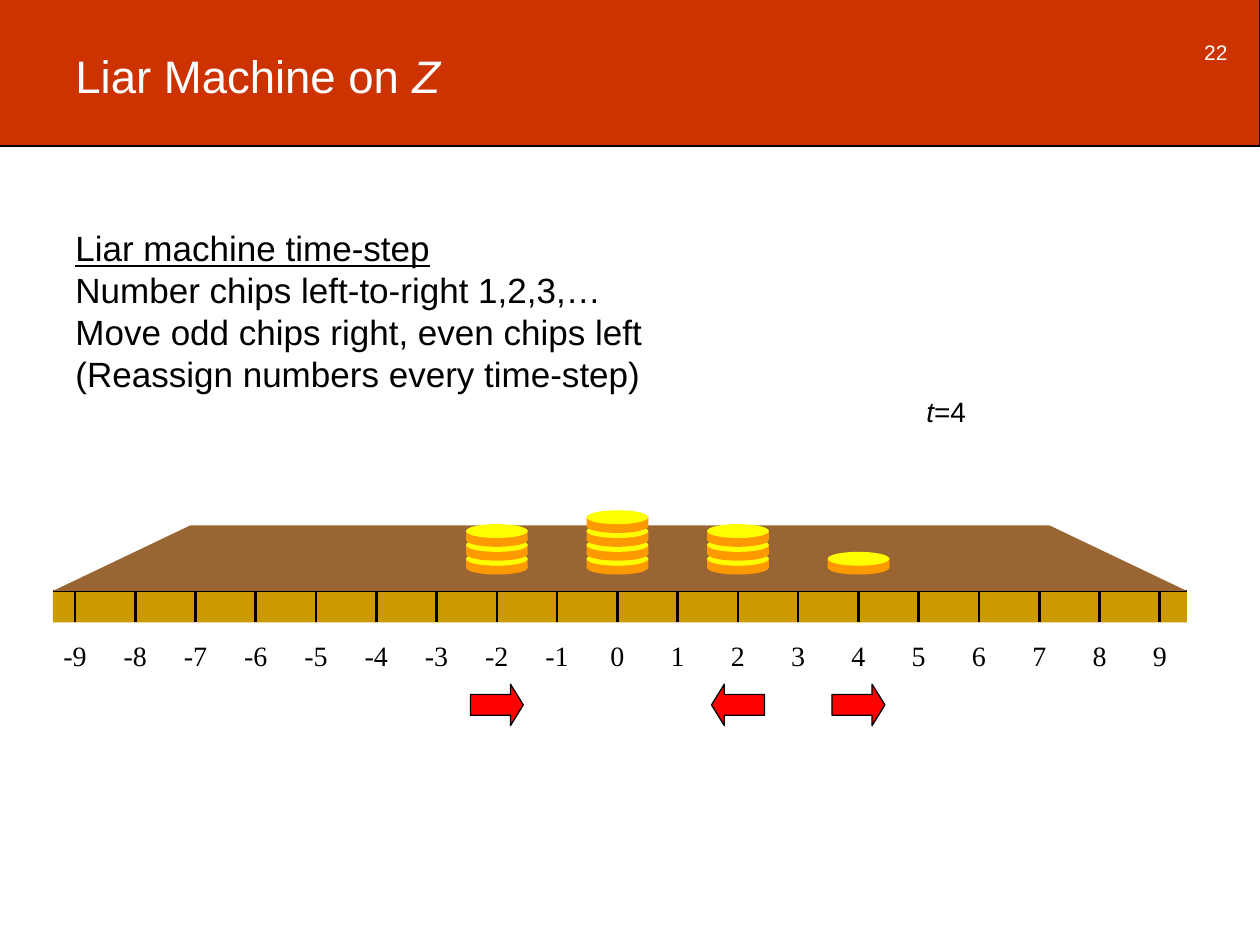
from lxml import etree
from pptx import Presentation
from pptx import util as u
from pptx.dml.color import RGBColor
from pptx.enum import shapes, text
from pptx.oxml import ns

WHITE = RGBColor(0xFF, 0xFF, 0xFF)
BLACK = RGBColor(0x00, 0x00, 0x00)
BANNER = RGBColor(0xCC, 0x33, 0x00)
TABLE_TOP = RGBColor(0x99, 0x66, 0x33)
TABLE_EDGE = RGBColor(0xCC, 0x99, 0x00)
CHIP_SIDE = RGBColor(0xFF, 0x99, 0x00)
CHIP_FACE = RGBColor(0xFF, 0xFF, 0x00)
ARROW_RED = RGBColor(0xFF, 0x00, 0x00)

SANS, SERIF = "Arial", "Times New Roman"
KIND = shapes.MSO_SHAPE
LEFT, CENTER, RIGHT = (text.PP_ALIGN.LEFT, text.PP_ALIGN.CENTER,
                       text.PP_ALIGN.RIGHT)

# Number line: one column per integer position
LAST = 9
COLUMN = 8.61 / (2 * LAST)
ORIGIN = 4.9
EDGE_LEFT, EDGE_RIGHT = 0.42, 9.42
EDGE_TOP, EDGE_BOTTOM = 4.69, 4.94
BACK_TOP, BACK_INSET = 4.17, 1.09

CHIP_WIDTH, CHIP_STEP, CHIP_BASE = 0.49, 0.11, 4.38
STACKS = {-2: 3, 0: 4, 2: 3, 4: 1}
MOVES = {-2: KIND.RIGHT_ARROW, 2: KIND.LEFT_ARROW, 4: KIND.RIGHT_ARROW}


def column_x(n):
    """Centre of position n on the number line."""
    return ORIGIN + n * COLUMN


def inches(*lengths):
    return [u.Inches(length) for length in lengths]


def paint(s, fill, line=None):
    s.shadow.inherit = False
    s.fill.solid()
    s.fill.fore_color.rgb = fill
    if line is None:
        s.line.fill.background()
    else:
        s.line.color.rgb = line
        s.line.width = u.Pt(0.75)


def add_shape(parent, kind, box, fill, line=None):
    s = parent.add_shape(kind, *inches(*box))
    paint(s, fill, line)
    return s


def add_line(parent, start, end):
    c = parent.add_connector(shapes.MSO_CONNECTOR.STRAIGHT,
                             *inches(*start, *end))
    c.line.color.rgb = BLACK
    c.line.width = u.Pt(1.5)
    etree.SubElement(c._element.spPr, ns.qn("a:effectLst"))


def add_text(parent, box, lines, size, font=SANS, color=BLACK, align=LEFT,
             wrap=False, anchor=text.MSO_ANCHOR.TOP):
    """Each line is a list of (words, style) runs; style is '', 'i' or 'u'."""
    tf = parent.add_textbox(*inches(*box)).text_frame
    tf.word_wrap = wrap
    tf.vertical_anchor = anchor
    for i, runs in enumerate(lines):
        p = tf.paragraphs[0] if i == 0 else tf.add_paragraph()
        p.alignment = align
        for words, style in runs:
            r = p.add_run()
            r.text = words
            r.font.name = font
            r.font.size = u.Pt(size)
            r.font.color.rgb = color
            r.font.italic = style == "i"
            r.font.underline = style == "u"


def add_header(sp):
    add_shape(sp, KIND.RECTANGLE, (-0.01, -0.01, 10.01, 1.17), BANNER, BLACK)
    add_text(sp, (0.5, 0.33, 7.58, 1), [[("Liar Machine on ", ""), ("Z", "i")]],
             26, color=WHITE, wrap=True)
    add_text(sp, (9.42, 0.15, 0.42, 0.52), [[("22", "")]], 12, color=WHITE,
             align=RIGHT, wrap=True, anchor=text.MSO_ANCHOR.MIDDLE)


def add_number_line(sp):
    add_shape(sp, KIND.RECTANGLE,
              (EDGE_LEFT, EDGE_TOP, EDGE_RIGHT - EDGE_LEFT,
               EDGE_BOTTOM - EDGE_TOP), TABLE_EDGE)
    group = sp.add_group_shape().shapes
    add_line(group, (EDGE_LEFT, EDGE_TOP), (EDGE_RIGHT, EDGE_TOP))
    for n in range(-LAST, LAST + 1):
        x = column_x(n)
        width = 0.41 if n < 0 else 0.33
        add_line(group, (x, EDGE_TOP), (x, EDGE_BOTTOM))
        add_text(group, (x - width / 2, 5.02, width, 0.4), [[(str(n), "")]],
                 16, font=SERIF, align=CENTER)
    outline = group.build_freeform(*inches(EDGE_RIGHT, EDGE_TOP))
    outline.add_line_segments([
        inches(EDGE_RIGHT - BACK_INSET, BACK_TOP),
        inches(EDGE_LEFT + BACK_INSET, BACK_TOP),
        inches(EDGE_LEFT, EDGE_TOP)])
    paint(outline.convert_to_shape(), TABLE_TOP)


def add_chip(sp, n, level):
    chip = sp.add_group_shape().shapes
    x = column_x(n) - CHIP_WIDTH / 2
    y = CHIP_BASE - level * CHIP_STEP
    for kind, drop, height, fill in (
            (KIND.RECTANGLE, 0.05, 0.08, CHIP_SIDE),
            (KIND.OVAL, 0.07, 0.11, CHIP_SIDE),
            (KIND.OVAL, 0, 0.11, CHIP_FACE)):
        add_shape(chip, kind, (x, y + drop, CHIP_WIDTH, height), fill)


def add_move(sp, n, kind):
    width = 0.42
    s = add_shape(sp, kind, (column_x(n) - width / 2, 5.43, width, 0.33),
                  ARROW_RED, BLACK)
    s.adjustments[0] = 0.5
    s.adjustments[1] = 0.31


def main():
    prs = Presentation()
    prs.slide_width, prs.slide_height = inches(10, 7.5)
    sp = prs.slides.add_slide(prs.slide_layouts[6]).shapes

    add_header(sp)
    add_text(sp, (0.5, 1.75, 4.73, 1.78), [
        [("Liar machine time-step", "u")],
        [("Number chips left-to-right 1,2,3,…", "")],
        [("Move odd chips right, even chips left", "")],
        [("(Reassign numbers every time-step)", "")]], 20)
    add_number_line(sp)
    for n, height in STACKS.items():
        for level in range(height):
            add_chip(sp, n, level)
    moves = sp.add_group_shape().shapes
    for n, kind in MOVES.items():
        add_move(moves, n, kind)
    add_text(sp, (7.25, 3.08, 0.52, 0.37), [[("t", "i"), ("=4", "")]], 16,
             align=CENTER)

    prs.save("out.pptx")


if __name__ == "__main__":
    main()
